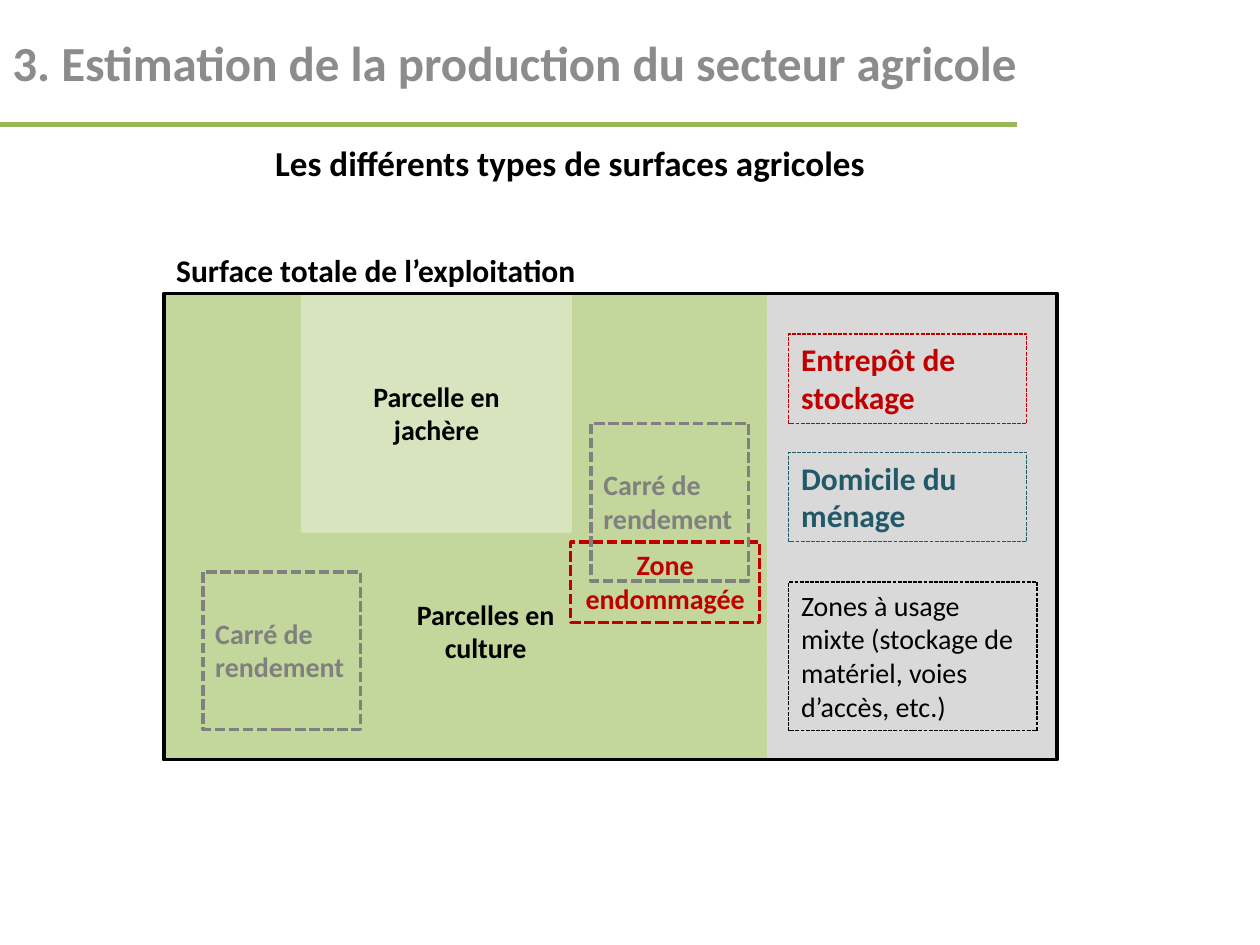
from lxml.etree import SubElement
from pptx import Presentation
from pptx.dml.color import RGBColor
from pptx.enum.dml import MSO_LINE
from pptx.enum.shapes import MSO_CONNECTOR, MSO_SHAPE
from pptx.enum.text import MSO_ANCHOR, PP_ALIGN
from pptx.oxml.ns import qn
from pptx.util import Inches, Pt

FONT = "Calibri"
BLACK = RGBColor(0x00, 0x00, 0x00)
TITLE_GREY = RGBColor(0x8C, 0x8C, 0x8C)
RULE_GREEN = RGBColor(0x98, 0xB9, 0x55)
CROP_GREEN = RGBColor(0xC3, 0xD6, 0x9B)
FALLOW_GREEN = RGBColor(0xD7, 0xE4, 0xBD)
BUILDING_GREY = RGBColor(0xD9, 0xD9, 0xD9)
SQUARE_GREY = RGBColor(0x80, 0x80, 0x80)
RED = RGBColor(0xC0, 0x00, 0x00)
TEAL = RGBColor(0x21, 0x59, 0x68)

FARM_LEFT, FARM_TOP, FARM_HEIGHT = 1.3, 2.33, 3.7
CROP_WIDTH, FARM_WIDTH = 4.8, 7.09
BUILDING_LEFT = FARM_LEFT + CROP_WIDTH


def write_text(shape, text, size, color, bold=True, align=PP_ALIGN.LEFT, top_inset=0.05):
    text_frame = shape.text_frame
    text_frame.word_wrap = True
    text_frame.vertical_anchor = MSO_ANCHOR.TOP
    text_frame.margin_top = Inches(top_inset)
    text_frame.text = text
    paragraph = text_frame.paragraphs[0]
    paragraph.alignment = align
    font = paragraph.runs[0].font
    font.name = FONT
    font.size = Pt(size)
    font.bold = bold
    font.color.rgb = color


def add_label(slide, box, text, size, color=BLACK, align=PP_ALIGN.LEFT):
    label = slide.shapes.add_textbox(*map(Inches, box))
    write_text(label, text, size, color, align=align)


def add_area(slide, box, line_color, fill=None, line_width=2, dashed=False):
    """Add a rectangle, see-through unless a fill is given."""
    area = slide.shapes.add_shape(MSO_SHAPE.RECTANGLE, *map(Inches, box))
    area.shadow.inherit = False
    if fill is None:
        area.fill.background()
    else:
        area.fill.solid()
        area.fill.fore_color.rgb = fill
    area.line.color.rgb = line_color
    area.line.width = Pt(line_width)
    if dashed:
        area.line.dash_style = MSO_LINE.SQUARE_DOT
    return area


def add_zone(slide, box, text, color, size=16, line_width=2, **text_format):
    """Add a dashed outline with its text in the same colour."""
    zone = add_area(slide, box, color, line_width=line_width, dashed=True)
    write_text(zone, text, size, color, **text_format)


def add_title_rule(slide):
    y = Inches(0.99)
    rule = slide.shapes.add_connector(MSO_CONNECTOR.STRAIGHT, 0, y, Inches(8.07), y)
    rule.line.color.rgb = RULE_GREEN
    rule.line.width = Pt(3)
    SubElement(rule._element.spPr, qn("a:effectLst"))


def add_farm_areas(slide):
    add_area(slide, (FARM_LEFT, FARM_TOP, CROP_WIDTH, FARM_HEIGHT), FALLOW_GREEN, CROP_GREEN)
    add_area(slide, (2.4, FARM_TOP, 2.13, 1.89), FALLOW_GREEN, FALLOW_GREEN)
    add_area(slide, (BUILDING_LEFT, FARM_TOP, 2.28, FARM_HEIGHT),
             BUILDING_GREY, BUILDING_GREY, dashed=True)
    add_area(slide, (FARM_LEFT, FARM_TOP, FARM_WIDTH, FARM_HEIGHT), BLACK)


def add_building_zones(slide):
    left = BUILDING_LEFT + 0.16
    add_zone(slide, (left, 2.65, 1.89, 0.71), "Entrepôt de stockage", RED, 18, 0.75)
    add_zone(slide, (left, 3.59, 1.89, 0.71), "Domicile du ménage", TEAL, 18, 0.75)
    add_zone(slide, (left, 4.62, 1.97, 1.18),
             "Zones à usage mixte (stockage de matériel, voies d’accès, etc.)",
             BLACK, 16, 0.75, bold=False)


def add_crop_zones(slide):
    center = PP_ALIGN.CENTER
    add_label(slide, (2.56, 2.96, 1.81, 0.64), "Parcelle en jachère", 16, align=center)
    add_label(slide, (2.95, 4.69, 1.81, 0.64), "Parcelles en culture", 16, align=center)
    add_zone(slide, (4.53, 4.3, 1.5, 0.64), "Zone endommagée", RED, align=center)
    for left, top in ((4.69, 3.36), (1.61, 4.54)):
        add_zone(slide, (left, top, 1.25, 1.25), "Carré de rendement",
                 SQUARE_GREY, top_inset=0.35)


def main():
    presentation = Presentation()
    presentation.slide_width = Inches(10)
    presentation.slide_height = Inches(7.5)
    slide = presentation.slides.add_slide(presentation.slide_layouts[6])

    add_farm_areas(slide)
    add_label(slide, (0, 0.21, 10, 1.1),
              "3. Estimation de la production du secteur agricole", 28, TITLE_GREY)
    add_title_rule(slide)
    add_label(slide, (1.06, 1.07, 6.93, 0.44),
              "Les différents types de surfaces agricoles", 20, align=PP_ALIGN.CENTER)
    add_label(slide, (FARM_LEFT, 1.94, 3.39, 0.4), "Surface totale de l’exploitation", 18)
    add_building_zones(slide)
    add_crop_zones(slide)

    presentation.save("out.pptx")


if __name__ == "__main__":
    main()
